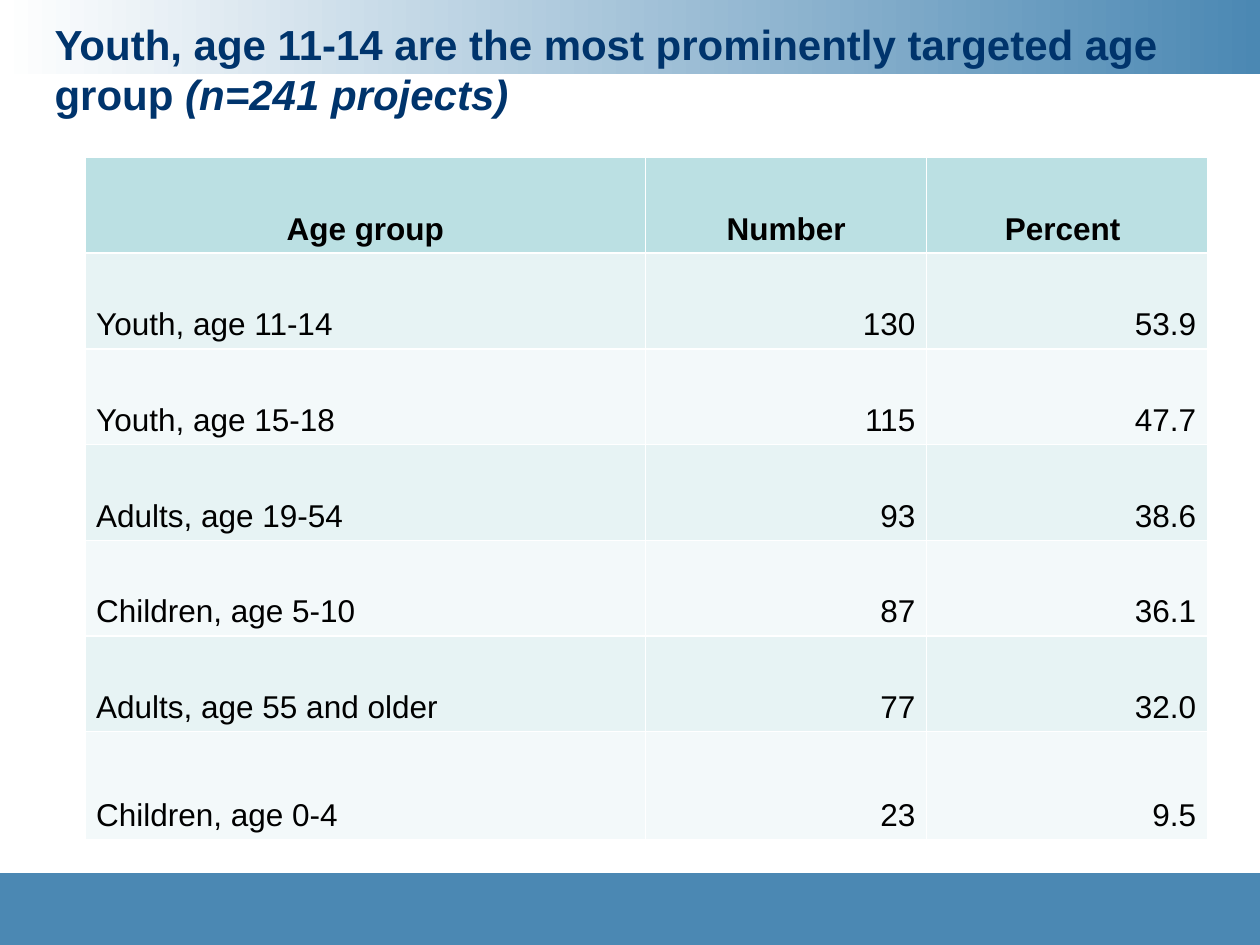
from pptx import Presentation
from pptx.dml.color import RGBColor
from pptx.enum.shapes import MSO_SHAPE
from pptx.enum.text import MSO_ANCHOR, MSO_AUTO_SIZE, PP_ALIGN
from pptx.util import Pt

TITLE = "Youth, age 11-14 are the most prominently targeted age group "
NOTE = "(n=241 projects)"
HEAD = ("Age group", "Number", "Percent ")
ROWS = [
    ("Youth, age 11-14", "130", "53.9"),
    ("Youth, age 15-18", "115", "47.7"),
    ("Adults, age 19-54", "93", "38.6"),
    ("Children, age 5-10", "87", "36.1"),
    ("Adults, age 55 and older", "77", "32.0"),
    ("Children, age 0-4", "23", "9.5"),
]
WIDTHS = (320.5, 160.5, 160.5)
HIGH, LAST = 54.7, 61.9
BLUE, NAVY = "4B88B3", "00346C"
TINTS = ("F3F9FA", "E7F3F4")
WIDE, TALL = 720, 540


def tint(hue):
    return RGBColor.from_string(hue)


def write(para, text, size=18, hue="000000", bold=False, italic=False,
          align=PP_ALIGN.LEFT, lead=12):
    para.alignment = align
    para.line_spacing = Pt(lead)
    run = para.add_run()
    run.text = text
    font = run.font
    font.name, font.size = "Arial", Pt(size)
    font.bold, font.italic = bold, italic
    font.color.rgb = tint(hue)


def add_band(slide, top, high):
    band = slide.shapes.add_shape(
        MSO_SHAPE.RECTANGLE, Pt(0), Pt(top), Pt(WIDE), Pt(high))
    band.shadow.inherit = False
    band.line.fill.background()
    return band.fill


def add_bands(slide):
    fade = add_band(slide, 0, 42.5)
    fade.gradient()
    fade.gradient_angle = 0
    for stop, hue in zip(fade.gradient_stops, ("FFFFFF", BLUE)):
        stop.color.rgb = tint(hue)
    foot = add_band(slide, 499, TALL - 499)
    foot.solid()
    foot.fore_color.rgb = tint(BLUE)


def add_title(slide):
    title = slide.shapes.title
    title.left, title.top = Pt(24), Pt(6)
    title.width, title.height = Pt(660), Pt(72.5)
    frame = title.text_frame
    frame.word_wrap = True
    frame.auto_size = MSO_AUTO_SIZE.NONE
    frame.vertical_anchor = MSO_ANCHOR.TOP
    frame.margin_top = Pt(5)
    para = frame.paragraphs[0]
    for text, slant in ((TITLE, False), (NOTE, True)):
        write(para, text, size=24, hue=NAVY, bold=True, italic=slant, lead=28.6)


def add_grid(slide):
    data = [HEAD, *ROWS]
    highs = [HIGH] * len(ROWS) + [LAST]
    grid = slide.shapes.add_table(
        len(data), len(HEAD), Pt(48.5), Pt(90), Pt(sum(WIDTHS)), Pt(sum(highs))).table
    for col, width in zip(grid.columns, WIDTHS):
        col.width = Pt(width)
    for r, (row, high) in enumerate(zip(data, highs)):
        grid.rows[r].height = Pt(high)
        for c, text in enumerate(row):
            cell = grid.cell(r, c)
            cell.fill.solid()
            cell.fill.fore_color.rgb = tint(TINTS[r % 2] if r else "BBE0E3")
            cell.vertical_anchor = MSO_ANCHOR.BOTTOM
            cell.margin_left = cell.margin_right = Pt(6.5)
            side = PP_ALIGN.RIGHT if c else PP_ALIGN.LEFT
            write(cell.text_frame.paragraphs[0], text, bold=r == 0,
                  align=side if r else PP_ALIGN.CENTER)


def main():
    """Build the age group slide."""
    deck = Presentation()
    deck.slide_width, deck.slide_height = Pt(WIDE), Pt(TALL)
    slide = deck.slides.add_slide(deck.slide_layouts[5])
    add_bands(slide)
    tree = slide.shapes.title.element.getparent()
    tree.append(slide.shapes.title.element)
    add_title(slide)
    add_grid(slide)
    deck.save("out.pptx")


if __name__ == "__main__":
    main()
